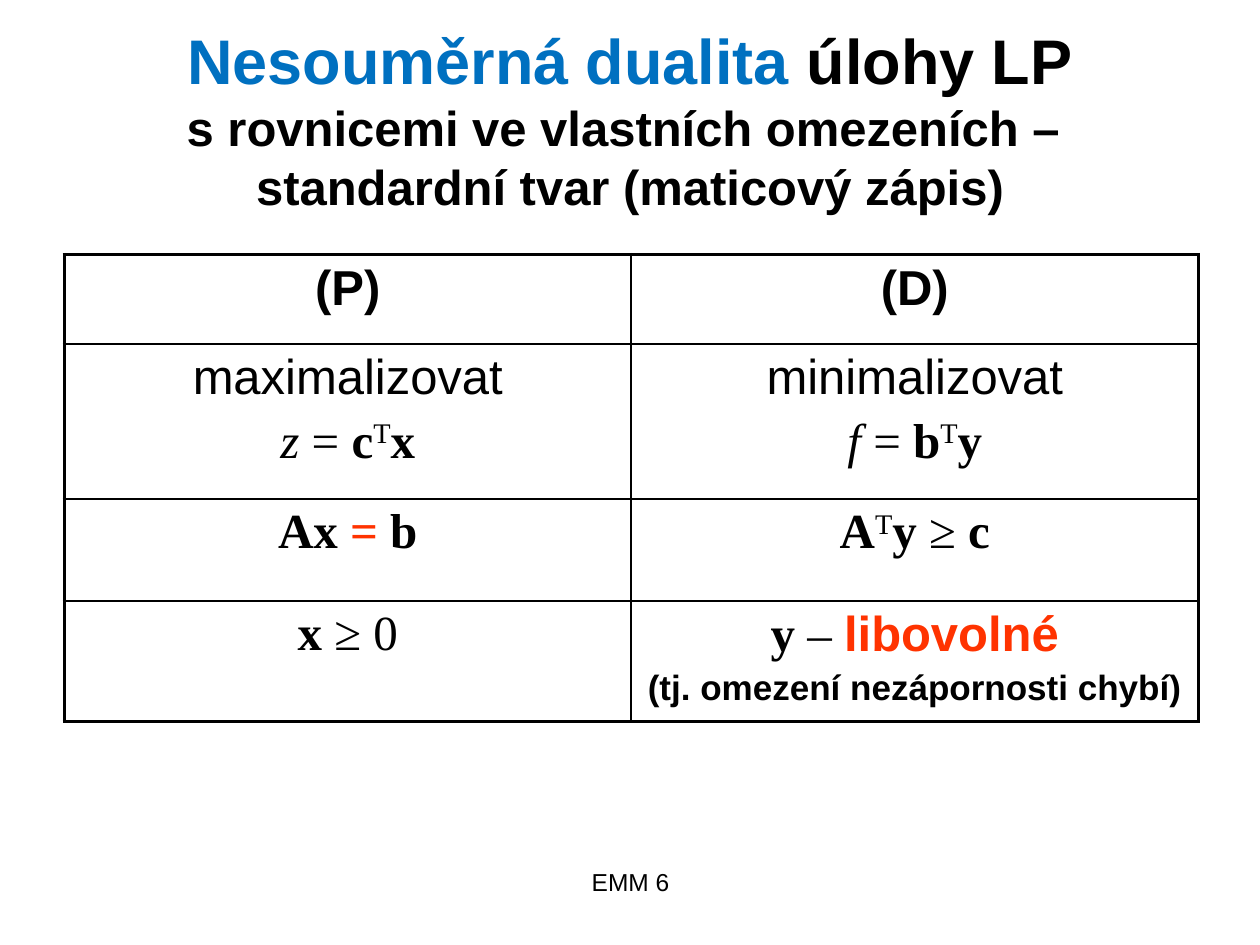
from lxml import etree
from pptx import Presentation
from pptx.dml.color import RGBColor
from pptx.enum.text import MSO_ANCHOR, PP_ALIGN
from pptx.oxml.ns import qn
from pptx.util import Inches, Pt

CENTER = PP_ALIGN.CENTER
MIDDLE = MSO_ANCHOR.MIDDLE
TOP = MSO_ANCHOR.TOP

COLORS = {"black": "000000", "blue": "0070C0", "red": "FF3300"}
SANS, SERIF = "Arial", "Times New Roman"
THICK, THIN = 2.25, 1
ROW_HEIGHTS = (0.71, 1.23, 0.81, 0.87)
COLUMN_WIDTH = 4.5


def add_span(para, text, size=28, font=SANS, color="black", bold=False,
             italic=False, superscript=False):
    span = para.add_run()
    span.text = text
    span.font.size = Pt(size)
    span.font.name = font
    span.font.bold = bold
    span.font.italic = italic
    span.font.color.rgb = RGBColor.from_string(COLORS[color])
    if superscript:
        span.font._element.set("baseline", "30000")


def math(text, **style):
    return text, {"font": SERIF, **style}


def vector(text):
    return math(text, bold=True)


TRANSPOSE = math("T", superscript=True)

# Each cell is a list of paragraphs, each paragraph a list of (text, format)
ROWS = [
    [[[("(P)", {"bold": True})]],
     [[("(D)", {"bold": True})]]],
    [[[("maximalizovat", {})],
      [math("z", italic=True), math(" = "), vector("c"), TRANSPOSE, vector("x")]],
     [[("minimalizovat", {})],
      [math("f ", italic=True), math("= "), vector("b"), TRANSPOSE, vector("y")]]],
    [[[vector("Ax "), math("= ", bold=True, color="red"), vector("b")]],
     [[vector("A"), TRANSPOSE, vector("y "), math("≥ "), vector("c")]]],
    [[[vector("x "), math("≥ 0")]],
     [[vector("y "), math("– "), ("libovolné", {"bold": True, "color": "red"})],
      [("(tj. omezení nezápornosti chybí)", {"bold": True, "size": 20})]]],
]


def add_text_box(page, left, top, width, height, anchor=TOP):
    box = page.shapes.add_textbox(Inches(left), Inches(top),
                                  Inches(width), Inches(height))
    box.text_frame.word_wrap = True
    box.text_frame.vertical_anchor = anchor
    para = box.text_frame.paragraphs[0]
    para.alignment = CENTER
    return para


def add_title(page):
    para = add_text_box(page, 0.5, 0.3, 9, 1.25, anchor=MIDDLE)
    add_span(para, "Nesouměrná dualita", size=36, color="blue", bold=True)
    add_span(para, " úlohy LP", size=36, bold=True)
    add_span(para, " ", size=38, bold=True)
    add_span(para, "s\u00a0rovnicemi ve vlastních omezeních – ", bold=True)
    para.add_line_break()
    add_span(para, "standardní tvar (maticový zápis)", bold=True)


def set_borders(cell, **widths):
    properties = cell._tc.get_or_add_tcPr()
    for side in "LRTB":
        line = etree.SubElement(properties, qn("a:ln" + side),
                                w=str(Pt(widths[side])))
        fill = etree.SubElement(line, qn("a:solidFill"))
        etree.SubElement(fill, qn("a:srgbClr"), val=COLORS["black"])


def fill_cell(cell, paragraphs):
    frame = cell.text_frame
    for index, spans in enumerate(paragraphs):
        para = frame.add_paragraph() if index else frame.paragraphs[0]
        para.alignment = CENTER
        if index:
            # A fifth of the text size
            para.space_before = Pt(0.2 * spans[0][1].get("size", 28))
        for text, style in spans:
            add_span(para, text, **style)


def add_duality_table(page):
    last_row, last_column = len(ROWS) - 1, len(ROWS[0]) - 1
    table = page.shapes.add_table(
        len(ROWS), len(ROWS[0]), Inches(0.51), Inches(2.02),
        Inches(COLUMN_WIDTH * len(ROWS[0])), Inches(sum(ROW_HEIGHTS))).table
    table.first_row = table.horz_banding = False
    for column in table.columns:
        column.width = Inches(COLUMN_WIDTH)
    for r, cells in enumerate(ROWS):
        table.rows[r].height = Inches(ROW_HEIGHTS[r])
        for c, paragraphs in enumerate(cells):
            cell = table.cell(r, c)
            fill_cell(cell, paragraphs)
            # Thick outer frame, thin inner grid
            set_borders(cell,
                        L=THICK if c == 0 else THIN,
                        R=THICK if c == last_column else THIN,
                        T=THICK if r == 0 else THIN,
                        B=THICK if r == last_row else THIN)
            cell.fill.background()


def main():
    deck = Presentation()
    deck.slide_width, deck.slide_height = Inches(10), Inches(7.5)
    page = deck.slides.add_slide(deck.slide_layouts[6])

    # Footer
    add_span(add_text_box(page, 3.42, 6.83, 3.17, 0.52), "EMM 6", size=14)
    # Heading and primal/dual comparison
    add_title(page)
    add_duality_table(page)

    deck.save("out.pptx")


if __name__ == "__main__":
    main()
